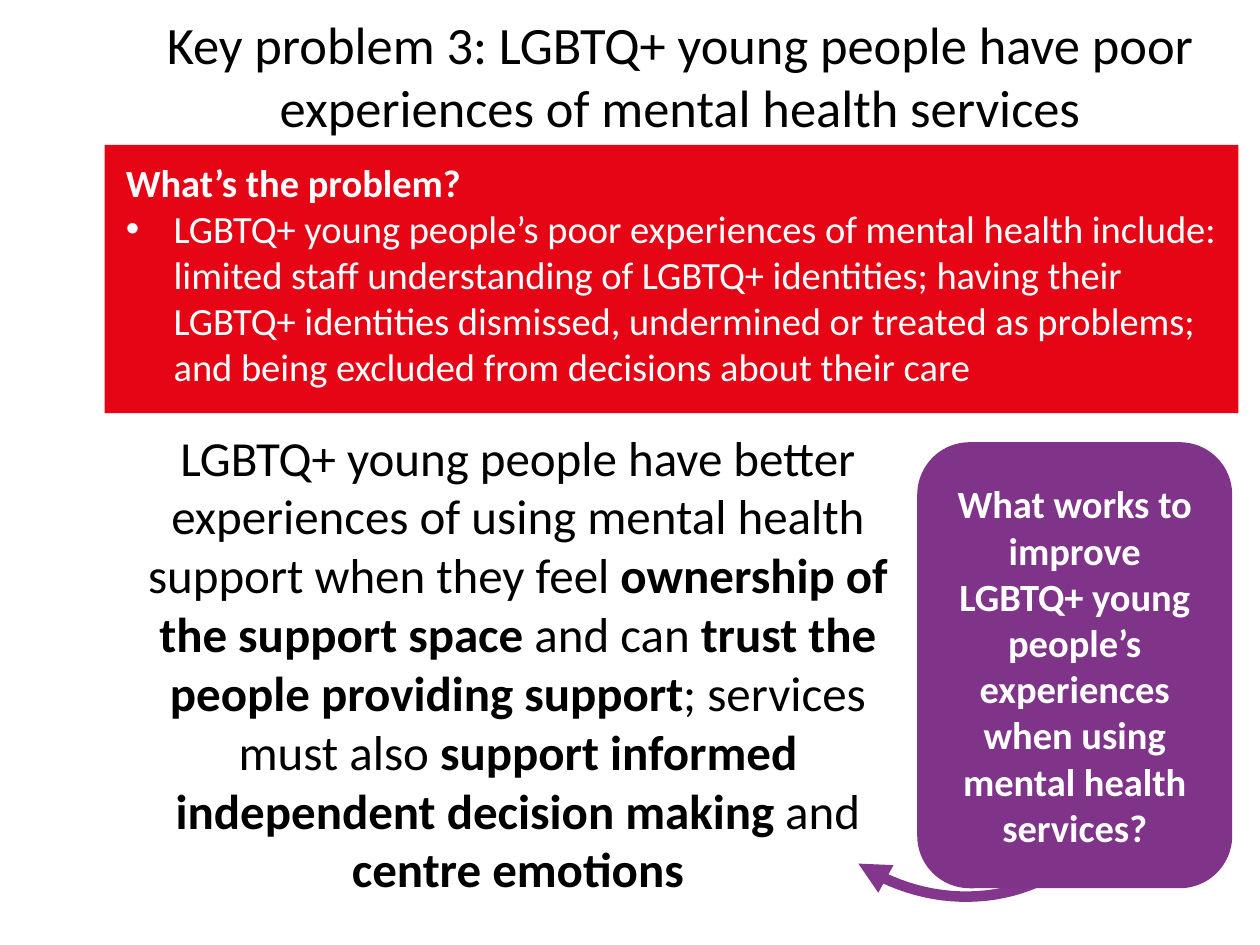
import math

from lxml import etree
from pptx import Presentation
from pptx import util as u
from pptx.dml.color import RGBColor
from pptx.enum import shapes, text
from pptx.oxml import ns

COLOURS = {
    "red": "E60515",
    "purple": "7F3389",
    "arrow": "82378C",
    "white": "FFFFFF",
    "black": "000000",
}
FONT = "Calibri"


def colour(name):
    return RGBColor.from_string(COLOURS[name])


def box(left, top, width, height):
    return [u.Inches(length) for length in (left, top, width, height)]


class SlideBuilder:
    """Holds the style and the slide being drawn."""

    def __init__(self, slide):
        self.slide = slide

    def block(self, preset, area, fill):
        shape = self.slide.shapes.add_shape(preset, *box(*area))
        shape.shadow.inherit = False
        shape.fill.solid()
        shape.fill.fore_color.rgb = colour(fill)
        shape.line.fill.background()
        return shape

    def text_box(self, area):
        return self.slide.shapes.add_textbox(*box(*area))

    def add_text(self, shape, paragraphs, size, font_colour,
                 align=text.PP_ALIGN.CENTER, anchor=text.MSO_ANCHOR.TOP):
        """Each paragraph is (bulleted, [(words, bold), ...])."""
        frame = shape.text_frame
        frame.word_wrap = True
        frame.vertical_anchor = anchor
        for index, (bulleted, runs) in enumerate(paragraphs):
            paragraph = frame.add_paragraph() if index else frame.paragraphs[0]
            paragraph.alignment = align
            if bulleted:
                self.add_bullet(paragraph)
            for words, bold in runs:
                run = paragraph.add_run()
                run.text = words
                run.font.name = FONT
                run.font.size = u.Pt(size)
                run.font.bold = bold
                run.font.color.rgb = colour(font_colour)

    def add_bullet(self, paragraph, indent=0.38):
        properties = paragraph._p.get_or_add_pPr()
        properties.set("marL", str(u.Inches(indent)))
        properties.set("indent", str(-u.Inches(indent)))
        etree.SubElement(properties, ns.qn("a:buFont"), typeface="Arial")
        etree.SubElement(properties, ns.qn("a:buChar"), char="•")

    def curved_arrow(self, area, rotation, line_colour, width, steps=32):
        """Draw a quarter ellipse from top left to bottom right, then turn it."""
        left, top, across, down = area
        angles = [math.pi / 2 * step / steps for step in range(steps + 1)]
        points = [(u.Inches(left + across * math.sin(angle)),
                   u.Inches(top + down * (1 - math.cos(angle))))
                  for angle in angles]
        builder = self.slide.shapes.build_freeform(*points[0])
        builder.add_line_segments(points[1:], close=False)
        arrow = builder.convert_to_shape()
        arrow.shadow.inherit = False
        arrow.fill.background()
        arrow.line.color.rgb = colour(line_colour)
        arrow.line.width = u.Pt(width)
        arrow.rotation = rotation
        outline = arrow._element.spPr.find(ns.qn("a:ln"))
        etree.SubElement(outline, ns.qn("a:tailEnd"), type="triangle")


def main():
    presentation = Presentation()
    presentation.slide_width = u.Inches(10)
    presentation.slide_height = u.Inches(7.5)
    builder = SlideBuilder(
        presentation.slides.add_slide(presentation.slide_layouts[6]))

    builder.curved_arrow((7.12, 5.96, 1.36, 1.47), 123.6, "arrow", 6)

    builder.block(shapes.MSO_SHAPE.RECTANGLE, (0.83, 1.15, 9, 2.13), "red")
    problem = builder.text_box((0.9, 1.21, 8.88, 2.07))
    builder.add_text(problem, [
        (False, [("What’s the problem?", True)]),
        (True, [("LGBTQ+ young people’s poor experiences of mental health "
                 "include: limited staff understanding of LGBTQ+ identities; "
                 "having their LGBTQ+ identities dismissed, undermined or "
                 "treated as problems; and being excluded from decisions "
                 "about their care", False)]),
    ], 22, "white", align=text.PP_ALIGN.LEFT)

    title = builder.text_box((0.9, 0.05, 9, 1.1))
    builder.add_text(title, [
        (False, [("Key problem 3: LGBTQ+ young people have poor experiences "
                  "of mental health services", False)]),
    ], 30, "black")

    question = builder.block(shapes.MSO_SHAPE.ROUNDED_RECTANGLE,
                             (7.28, 3.51, 2.5, 3.54), "purple")
    builder.add_text(question, [
        (False, [("What works to improve LGBTQ+ young people’s experiences "
                  "when using mental health services?", True)]),
    ], 22, "white", anchor=text.MSO_ANCHOR.MIDDLE)

    answer = builder.text_box((0.94, 3.34, 6.34, 3.72))
    builder.add_text(answer, [
        (False, [
            ("LGBTQ+ young people have better experiences of using mental "
             "health support when they feel ", False),
            ("ownership of the support space", True),
            (" and can ", False),
            ("trust the people providing support", True),
            ("; services must also ", False),
            ("support informed independent decision making", True),
            (" and ", False),
            ("centre emotions", True),
        ]),
    ], 28, "black")

    presentation.save("out.pptx")


if __name__ == "__main__":
    main()
